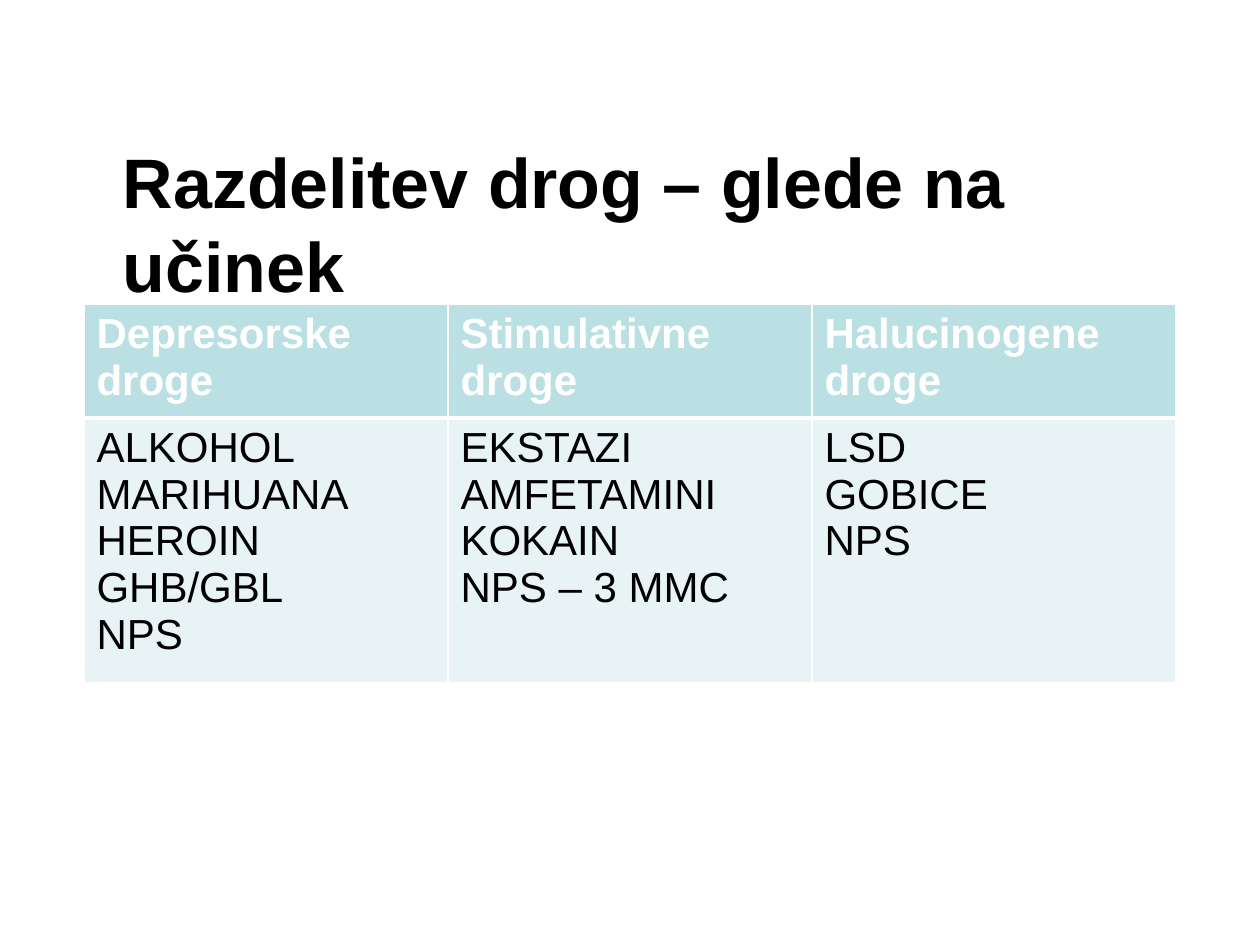
from lxml import etree
from pptx import Presentation
from pptx.dml.color import RGBColor
from pptx.enum import text
from pptx.oxml import ns
from pptx.util import Pt

FONT = "Arial"
WHITE, BLACK = "FFFFFF", "000000"
HEADER_FILL, BODY_FILL = "BBE0E3", "E7F3F4"
DRUGS = {
    "Depresorske droge": ["ALKOHOL", "MARIHUANA", "HEROIN", "GHB/GBL", "NPS"],
    "Stimulativne droge": ["EKSTAZI", "AMFETAMINI", "KOKAIN", "NPS – 3 MMC"],
    "Halucinogene droge": ["LSD", "GOBICE", "NPS"],
}


def color(value):
    return RGBColor.from_string(value)


def style_text(frame, size, hue, bold):
    formats = {"name": FONT, "size": Pt(size), "bold": bold}
    for paragraph in frame.paragraphs:
        paragraph.alignment = text.PP_ALIGN.LEFT
        for run in paragraph.runs:
            for key, value in formats.items():
                setattr(run.font, key, value)
            run.font.color.rgb = color(hue)


def set_borders(cell, widths):
    """Draw white cell borders; widths maps L, R, T and B to points."""
    properties = cell._tc.get_or_add_tcPr()
    for side, width in widths.items():
        line = etree.SubElement(properties, ns.qn(f"a:ln{side}"), w=str(Pt(width)))
        fill = etree.SubElement(line, ns.qn("a:solidFill"))
        etree.SubElement(fill, ns.qn("a:srgbClr"), val=WHITE)


def add_title(slide, left, top, width, height):
    title = slide.shapes.title
    box = {"left": left, "top": top, "width": width, "height": height}
    for key, value in box.items():
        setattr(title, key, Pt(value))
    frame = title.text_frame
    frame.text = "Razdelitev drog – glede na učinek"
    frame.word_wrap = True
    frame.auto_size = text.MSO_AUTO_SIZE.NONE
    frame.vertical_anchor = text.MSO_ANCHOR.TOP
    style_text(frame, 40, BLACK, True)


def add_drug_table(slide, left, top, width, height):
    frame = slide.shapes.add_table(
        2, len(DRUGS), Pt(left), Pt(top), Pt(width), Pt(height))
    table = frame.table
    table.rows[0].height = Pt(height * 0.3)
    table.rows[1].height = Pt(height * 0.7)
    for column, (group, drugs) in enumerate(DRUGS.items()):
        rows = [(group, HEADER_FILL, WHITE, True, {"T": 1, "B": 3}),
                ("\n".join(drugs), BODY_FILL, BLACK, False, {"T": 3, "B": 1})]
        for row, (content, fill, hue, bold, edges) in enumerate(rows):
            cell = table.cell(row, column)
            cell.text = content
            style_text(cell.text_frame, 24, hue, bold)
            set_borders(cell, {"L": 1, "R": 1, **edges})
            cell.fill.solid()
            cell.fill.fore_color.rgb = color(fill)


def main():
    deck = Presentation()
    deck.slide_width, deck.slide_height = Pt(720), Pt(540)
    slide = deck.slides.add_slide(deck.slide_layouts[5])
    add_drug_table(slide, 48, 174, 624, 216)
    add_title(slide, 63, 75.6, 615, 55.4)
    deck.save("out.pptx")


if __name__ == "__main__":
    main()
